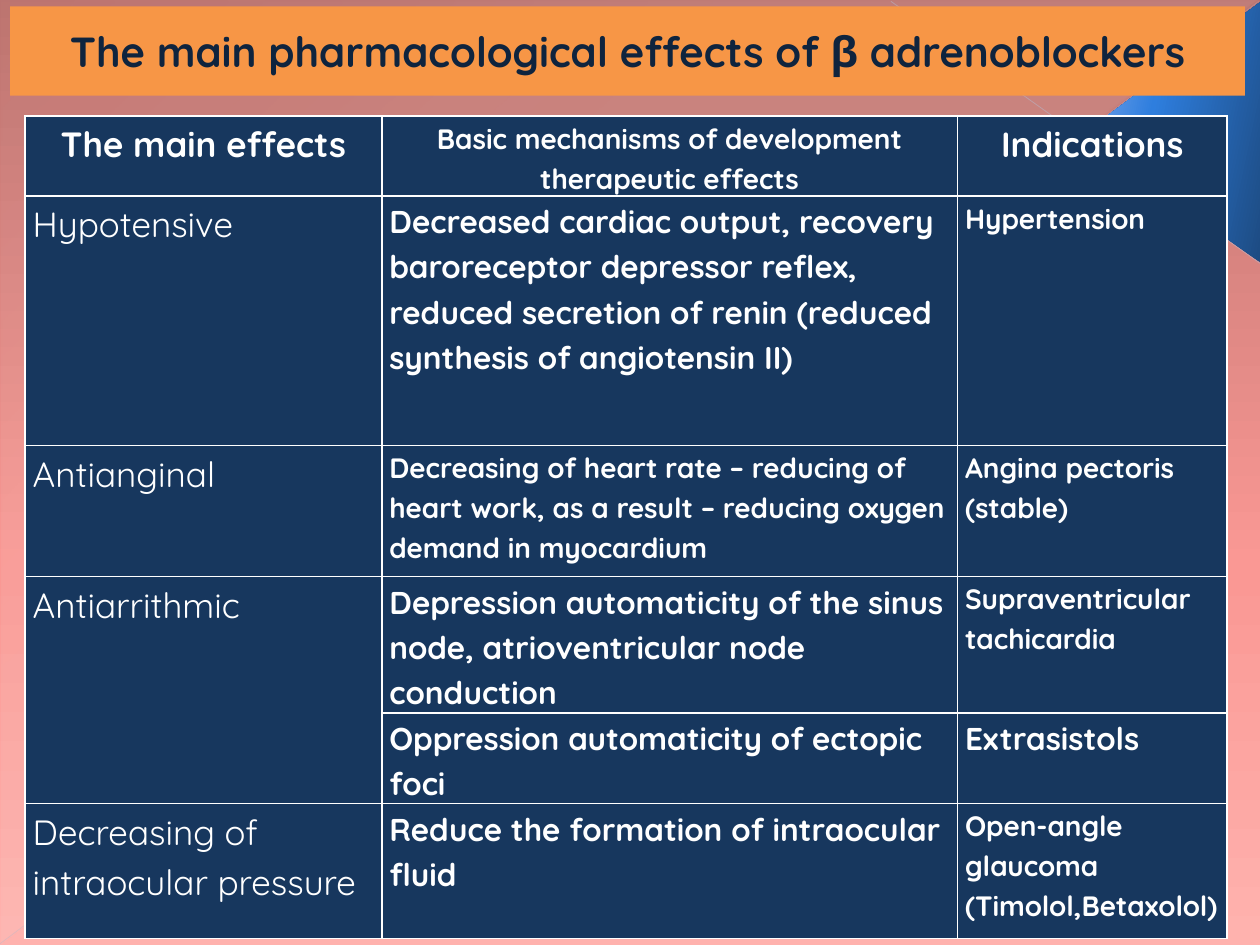
"""Build a slide tabulating the pharmacological effects of β adrenoblockers."""
from dataclasses import dataclass
from lxml import etree
from pptx import Presentation
from pptx import util as u
from pptx.dml.color import RGBColor
from pptx.enum import shapes, text
from pptx.oxml.ns import qn

COLORS = {
    "white": "FFFFFF", "navy": "17375E", "ink": "0F243E", "orange": "F79646",
    "cream": "EEECE1", "rose": "BC736F", "salmon": "FA9894", "pink": "FFB2AE",
    "deep": "1D4B82", "blue": "2E7EDE", "sky": "88ADED",
    "mist": "B6BED3", "haze": "ADB6CE",
}
FONT = "Quicksand"
COLS = (2.83, 4.57, 2.14)
ROWS = (0.63, 1.98, 1.04, 1.04, 0.54, 1.07)
MARGINS = {"margin_left": 0.06, "margin_right": 0.06, "margin_top": 0, "margin_bottom": 0}
PLAIN_TABLE = {"first_row": False, "horz_banding": False}
CENTER = text.PP_ALIGN.CENTER


@dataclass
class Entry:
    """Text and format of one table cell."""
    lines: str
    size: int
    bold: bool = True
    after: int = 10


@dataclass
class Ray:
    """A faint decorative line."""
    start: tuple
    end: tuple
    color: str
    width: float
    alpha: int


@dataclass
class Facet:
    """A flipped triangle with a gradient."""
    kind: shapes.MSO_SHAPE
    box: tuple
    stops: tuple
    angle: int
    rotation: int = 0


TABLE = (
    (Entry("The main effects", 20),
     Entry("Basic mechanisms of development\ntherapeutic effects", 16, after=0),
     Entry("Indications", 20)),
    (Entry("Hypotensive", 20, False),
     Entry("Decreased cardiac output, recovery baroreceptor depressor reflex, reduced "
           "secretion of renin (reduced synthesis of angiotensin II)", 18),
     Entry("Hypertension", 16)),
    (Entry("Antianginal", 20, False),
     Entry("Decreasing of heart rate – reducing of heart work, as a result – reducing "
           "oxygen demand in myocardium", 16),
     Entry("Angina pectoris (stable)", 16)),
    (Entry("Antiarrithmic", 20, False),
     Entry("Depression automaticity of the sinus node, atrioventricular node conduction", 18),
     Entry("Supraventricular tachicardia", 16)),
    (None,
     Entry("Oppression automaticity of ectopic foci", 18),
     Entry("Extrasistols", 18)),
    (Entry("Decreasing of intraocular pressure", 20, False, 0),
     Entry("Reduce the formation of intraocular fluid", 18),
     Entry("Open-angle glaucoma (Timolol,Betaxolol)", 16)),
)
FACETS = (
    Facet(shapes.MSO_SHAPE.RIGHT_TRIANGLE, (0.01, 0.01, 9.98, 7.48),
          ((0, "cream", 10), (70, "cream", 8), (100, "cream", 1)), 133),
    Facet(shapes.MSO_SHAPE.ISOSCELES_TRIANGLE, (8.26, 0.34, 2.07, 1.42),
          ((0, "deep", 100), (60, "blue", 100), (100, "sky", 100)), 258, 90),
)
RAYS = (
    Ray((10, 2.09), (7.07, 0.01), "mist", 0.47, 45),
    Ray((0, 7.49), (9.99, 0.01), "haze", 0.39, 35),
)


def rgb(name: str) -> RGBColor:
    """Return a named colour."""
    return RGBColor.from_string(COLORS[name])


def apply(target, values: dict) -> None:
    """Set attributes from a dict."""
    for key, value in values.items():
        setattr(target, key, value)


def add_color(parent, name: str, alpha: int = 100) -> None:
    """Append a colour with its opacity in percent."""
    clr = etree.SubElement(parent, qn("a:srgbClr"), val=COLORS[name])
    if alpha < 100:
        etree.SubElement(clr, qn("a:alpha"), val=str(alpha * 1000))


def set_gradient(fill, element, stops: tuple, angle: int) -> None:
    """Give a fill a linear gradient with any number of stops."""
    fill.gradient()
    grad = element.find(".//" + qn("a:gradFill"))
    grad.clear()
    grad.set("rotWithShape", "1")
    gs_list = etree.SubElement(grad, qn("a:gsLst"))
    for pos, name, alpha in stops:
        add_color(etree.SubElement(gs_list, qn("a:gs"), pos=str(pos * 1000)), name, alpha)
    etree.SubElement(grad, qn("a:lin"), ang=str(angle * 60000), scaled="0")


def add_facet(s, facet: Facet) -> None:
    """Draw one decorative triangle."""
    sp = s.shapes.add_shape(facet.kind, *map(u.Inches, facet.box))
    sp.shadow.inherit = False
    sp.rotation = facet.rotation
    sp.element.spPr.find(qn("a:xfrm")).set("flipV", "1")
    if facet.kind == shapes.MSO_SHAPE.ISOSCELES_TRIANGLE:
        sp.adjustments[0] = 0.51
    set_gradient(sp.fill, sp.element.spPr, facet.stops, facet.angle)
    sp.line.fill.background()


def add_ray(s, ray: Ray) -> None:
    """Draw one decorative line."""
    cx = s.shapes.add_connector(shapes.MSO_CONNECTOR.STRAIGHT,
                                *map(u.Inches, ray.start + ray.end))
    cx.line.width = u.Pt(ray.width)
    cx.line.color.rgb = rgb(ray.color)
    clr = cx.element.spPr.find(".//" + qn("a:srgbClr"))
    etree.SubElement(clr, qn("a:alpha"), val=str(ray.alpha * 1000))
    etree.SubElement(cx.element.spPr, qn("a:effectLst"))


def add_run(p, words: str, size: int, bold: bool, color: str) -> None:
    """Add a formatted run to a paragraph."""
    r = p.add_run()
    r.text = words
    apply(r.font, {"name": FONT, "size": u.Pt(size), "bold": bold})
    r.font.color.rgb = rgb(color)


def add_title(s, words: str) -> None:
    """Draw the title bar."""
    sp = s.shapes.add_shape(shapes.MSO_SHAPE.RECTANGLE,
                            *map(u.Inches, (0.08, 0.05, 9.8, 0.71)))
    sp.shadow.inherit = False
    sp.fill.solid()
    sp.fill.fore_color.rgb = rgb("orange")
    sp.line.fill.background()
    tf = sp.text_frame
    apply(tf, {"word_wrap": True, "vertical_anchor": text.MSO_ANCHOR.MIDDLE})
    p = tf.paragraphs[0]
    p.alignment = CENTER
    add_run(p, words, 24, True, "ink")


def style_cell(cell) -> None:
    """Set margins, fill and borders of a cell."""
    apply(cell, {key: u.Inches(value) for key, value in MARGINS.items()})
    cell.fill.solid()
    cell.fill.fore_color.rgb = rgb("navy")
    tc_pr = cell._tc.get_or_add_tcPr()
    for i, side in enumerate("LRTB"):
        ln = etree.Element(qn(f"a:ln{side}"), w=str(u.Pt(1)))
        add_color(etree.SubElement(ln, qn("a:solidFill")), "white")
        tc_pr.insert(i, ln)


def fill_cell(cell, entry: Entry, header: bool) -> None:
    """Write an entry into a cell."""
    tf = cell.text_frame
    for i, words in enumerate(entry.lines.split("\n")):
        p = tf.add_paragraph() if i else tf.paragraphs[0]
        apply(p, {"alignment": CENTER if header else text.PP_ALIGN.LEFT,
                  "line_spacing": 1.15, "space_after": u.Pt(entry.after)})
        add_run(p, words, entry.size, entry.bold, "white")


def add_effects_table(s) -> None:
    """Draw the table of effects."""
    box = (0.2, 0.92, sum(COLS), sum(ROWS))
    table = s.shapes.add_table(len(ROWS), len(COLS), *map(u.Inches, box)).table
    apply(table, PLAIN_TABLE)
    for col, width in zip(table.columns, COLS):
        col.width = u.Inches(width)
    for row, height in zip(table.rows, ROWS):
        row.height = u.Inches(height)
    table.cell(3, 0).merge(table.cell(4, 0))
    for i, entries in enumerate(TABLE):
        for j, entry in enumerate(entries):
            cell = table.cell(i, j)
            style_cell(cell)
            if entry:
                fill_cell(cell, entry, i == 0)


def main() -> None:
    """Build and save the presentation."""
    prs = Presentation()
    apply(prs, {"slide_width": u.Inches(10), "slide_height": u.Inches(7.5)})
    s = prs.slides.add_slide(prs.slide_layouts[6])
    set_gradient(s.background.fill, s.element,
                 ((0, "rose", 100), (60, "salmon", 100), (100, "pink", 100)), 90)
    for facet in FACETS:
        add_facet(s, facet)
    for ray in RAYS:
        add_ray(s, ray)
    add_title(s, "The main pharmacological effects of β adrenoblockers")
    add_effects_table(s)
    prs.save("out.pptx")


if __name__ == "__main__":
    main()
